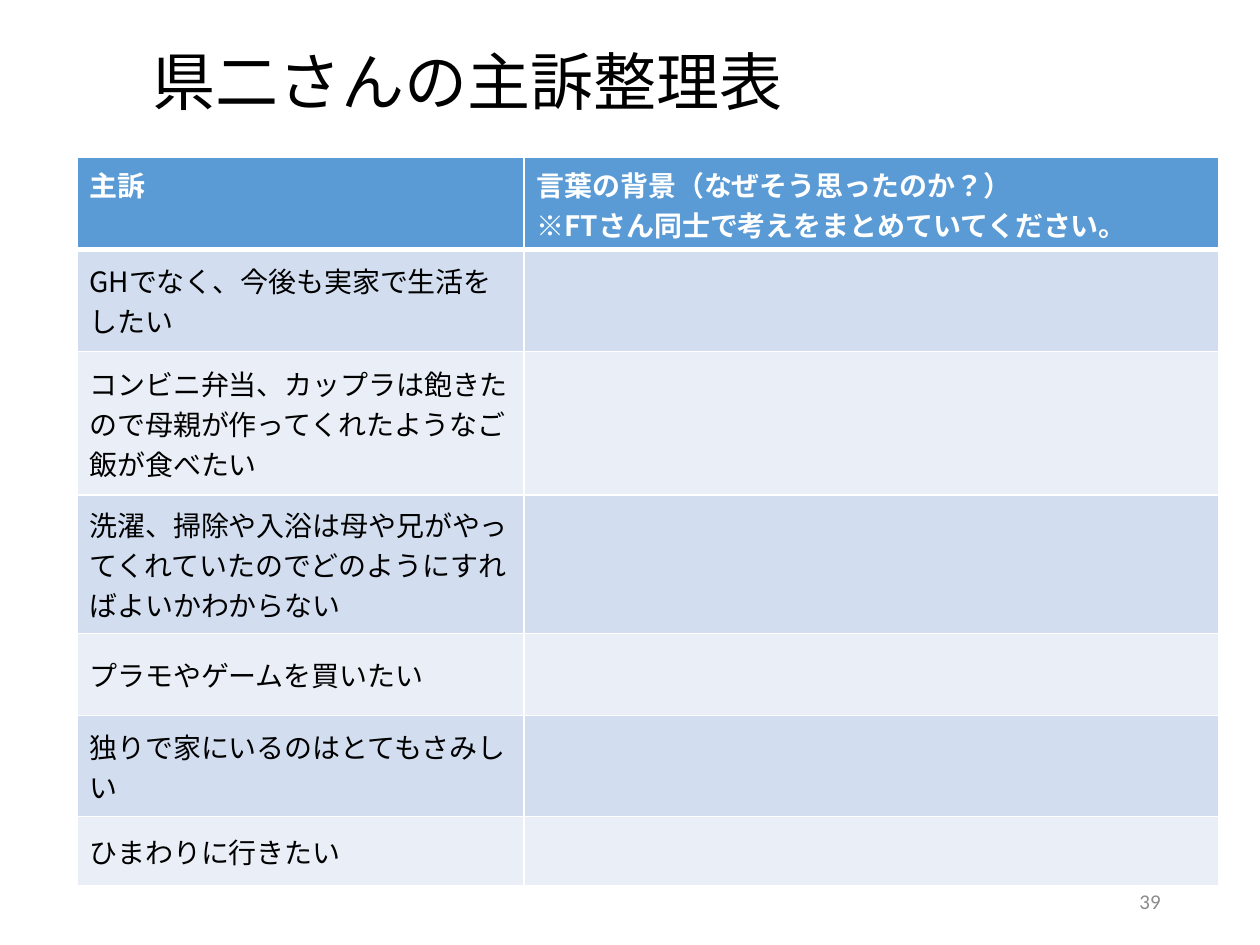
"""Build the table slide that sorts out the main complaints."""
from lxml.etree import SubElement
from pptx import Presentation
from pptx.dml.color import RGBColor
from pptx.enum.lang import MSO_LANGUAGE_ID
from pptx.enum.text import MSO_ANCHOR, PP_ALIGN
from pptx.oxml.ns import qn
from pptx.util import Inches, Pt

HUES = {"head": "5B9BD5", "odd": "D2DEEF", "even": "EAEFF7",
        "line": "FFFFFF", "text": "000000", "page": "8C8C8C"}
FACE = "Noto Sans CJK JP"
HEADS = ["主訴", "言葉の背景（なぜそう思ったのか？）\n※FTさん同士で考えをまとめていてください。"]
NEEDS = [
    "GHでなく、今後も実家で生活をしたい",
    "コンビニ弁当、カップラは飽きたので母親が作ってくれたようなご飯が食べたい",
    "洗濯、掃除や入浴は母や兄がやってくれていたのでどのようにすればよいかわからない",
    "プラモやゲームを買いたい",
    "独りで家にいるのはとてもさみしい",
    "ひまわりに行きたい",
]
COLS = [3.55, 5.51]
ROWS = [0.73, 0.81, 1.14, 1.1, 0.65, 0.8, 0.55]
LEFT = Inches(0.61)


def style(para, size, hue, face=FACE, bold=False):
    font = para.font
    font.size, font.bold, font.name = Pt(size), bold, face
    font.language_id = MSO_LANGUAGE_ID.JAPANESE
    font.color.rgb = RGBColor.from_string(HUES[hue])
    SubElement(font._element, qn("a:ea"), typeface=FACE)


def edge(cell, side, width):
    line = SubElement(cell._tc.get_or_add_tcPr(), qn(f"a:ln{side}"), w=str(Pt(width)))
    fill = SubElement(line, qn("a:solidFill"))
    SubElement(fill, qn("a:srgbClr"), val=HUES["line"])


deck = Presentation()
deck.slide_width, deck.slide_height = Inches(10), Inches(7.5)
slide = deck.slides.add_slide(deck.slide_layouts[5])

title = slide.shapes.title
title.left, title.top = LEFT, Inches(0.22)
title.width, title.height = Inches(8.62), Inches(0.91)
title.text_frame.text = "　県二さんの主訴整理表"
title.text_frame.vertical_anchor = MSO_ANCHOR.MIDDLE
para = title.text_frame.paragraphs[0]
para.alignment, para.line_spacing = PP_ALIGN.LEFT, 0.9
style(para, 36, "text")

page = slide.shapes.add_textbox(Inches(7.06), Inches(6.95), Inches(2.25), Inches(0.4))
page.text_frame.word_wrap = True
page.text_frame.vertical_anchor = MSO_ANCHOR.MIDDLE
para = page.text_frame.paragraphs[0]
para.text, para.alignment = "39", PP_ALIGN.RIGHT
style(para, 12, "page", "Calibri")

grid = slide.shapes.add_table(len(ROWS), len(COLS), LEFT, Inches(1.25),
                              Inches(sum(COLS)), Inches(sum(ROWS))).table
for col, width in zip(grid.columns, COLS):
    col.width = Inches(width)
for row, height in zip(grid.rows, ROWS):
    row.height = Inches(height)

for r, texts in enumerate([HEADS] + [[need, ""] for need in NEEDS]):
    head = r == 0
    for c, text in enumerate(texts):
        cell = grid.cell(r, c)
        for side in "LRTB":
            edge(cell, side, 3 if (head and side == "B") or (r == 1 and side == "T") else 1)
        cell.fill.solid()
        hue = "head" if head else "odd" if r % 2 else "even"
        cell.fill.fore_color.rgb = RGBColor.from_string(HUES[hue])
        cell.vertical_anchor = MSO_ANCHOR.TOP if head else MSO_ANCHOR.MIDDLE
        cell.text = text
        for para in cell.text_frame.paragraphs:
            style(para, 16, "line" if head else "text", bold=head)

deck.save("out.pptx")
